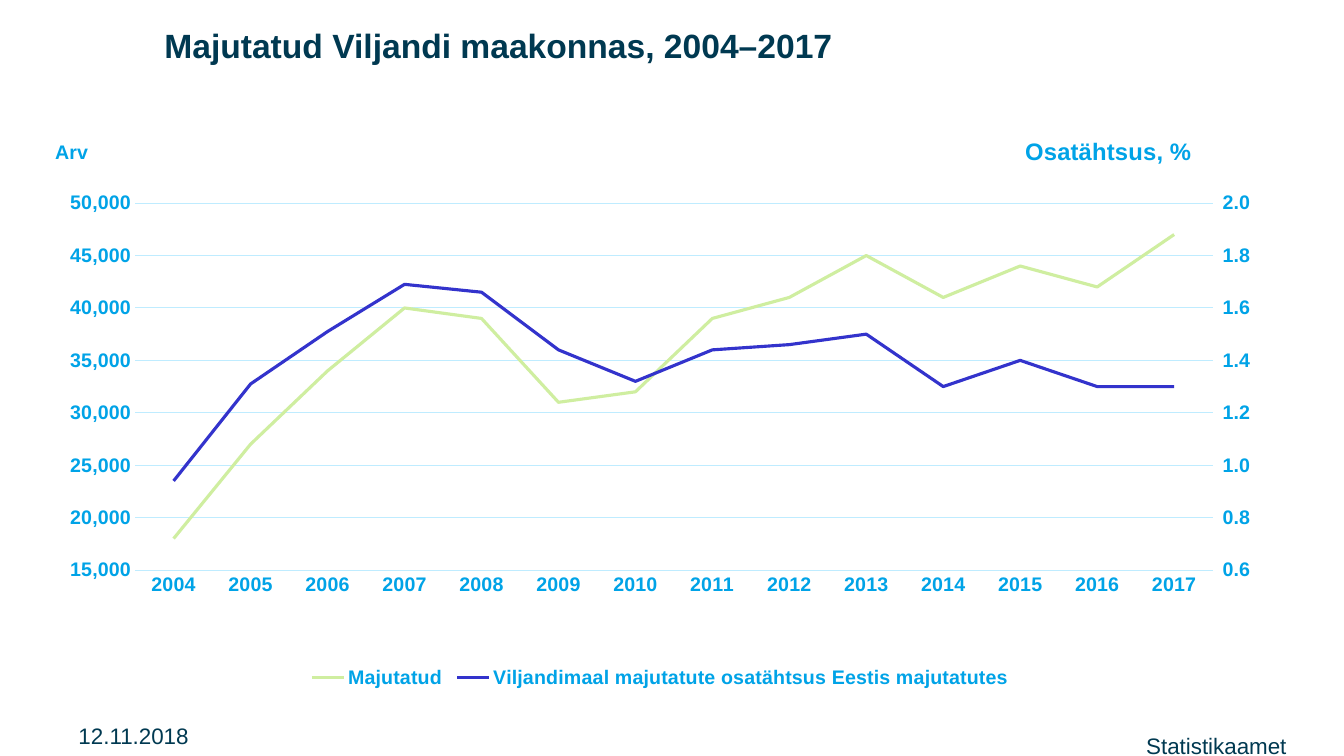
"""Build the slide on guests accommodated in Viljandi county, 2004–2017."""
from copy import deepcopy
from dataclasses import dataclass
from typing import Any

from lxml.etree import SubElement
from pptx import Presentation
from pptx.chart.axis import ValueAxis
from pptx.chart.data import CategoryChartData
from pptx.dml.color import RGBColor
from pptx.enum.chart import XL_CHART_TYPE as ChartType
from pptx.enum.chart import XL_LEGEND_POSITION as LegendPosition
from pptx.enum.chart import XL_TICK_LABEL_POSITION as LabelPosition
from pptx.enum.chart import XL_TICK_MARK as TickMark
from pptx.enum.text import MSO_ANCHOR as Anchor
from pptx.enum.text import PP_ALIGN as Align
from pptx.oxml.ns import qn
from pptx.util import Inches, Pt

NAVY = RGBColor(0x00, 0x39, 0x51)
SKY = RGBColor(0x00, 0xA3, 0xE7)
PALE_BLUE = RGBColor(0xBF, 0xEC, 0xFF)
LIME = RGBColor(0xCF, 0xEE, 0xA0)
INDIGO = RGBColor(0x33, 0x33, 0xCC)


@dataclass
class LineSeries:
    name: str
    values: list[float]
    color: RGBColor


@dataclass
class Label:
    text: str
    box: tuple[float, float, float, float]
    frame_format: dict[str, Any]
    paragraph_format: dict[str, Any]
    size: int = 16
    bold: bool = False


SERIES = [
    LineSeries("Majutatud", [18000, 27000, 34000, 40000, 39000, 31000, 32000,
                             39000, 41000, 45000, 41000, 44000, 42000, 47000], LIME),
    LineSeries("Viljandimaal majutatute osatähtsus Eestis majutatutes",
               [0.94, 1.31, 1.51, 1.69, 1.66, 1.44, 1.32,
                1.44, 1.46, 1.5, 1.3, 1.4, 1.3, 1.3], INDIGO),
]
NO_MARGINS = dict(margin_left=0, margin_top=0, margin_right=0, margin_bottom=0)
TITLE = Label("Majutatud Viljandi maakonnas, 2004–2017", (1.63, 0.12, 10.29, 0.66),
              NO_MARGINS | {"vertical_anchor": Anchor.MIDDLE},
              {"alignment": Align.LEFT}, 24, True)
FOOTERS = [
    Label("Statistikaamet", (8.54, 7.25, 4.22, 0.25),
          NO_MARGINS | {"margin_top": Inches(0.06)},
          {"alignment": Align.RIGHT, "line_spacing": 0.8}),
    Label("12.11.2018", (0.68, 7.1, 3.11, 0.4),
          {"vertical_anchor": Anchor.MIDDLE}, {"alignment": Align.LEFT}),
]


def set_all(target: Any, values: dict[str, Any]) -> None:
    for name, value in values.items():
        setattr(target, name, value)


def set_font(font: Any, size: int, color: RGBColor, bold: bool = True) -> None:
    set_all(font, {"name": "Arial", "size": Pt(size), "bold": bold})
    font.color.rgb = color


def set_line(line: Any, color: RGBColor, width: float) -> None:
    line.color.rgb = color
    line.width = Pt(width)


def fill_label(shape: Any, label: Label) -> None:
    places = map(Inches, label.box)
    set_all(shape, dict(zip(("left", "top", "width", "height"), places)))
    frame = shape.text_frame
    frame.text = label.text
    set_all(frame, {"word_wrap": True} | label.frame_format)
    paragraph = frame.paragraphs[0]
    set_all(paragraph, label.paragraph_format)
    set_font(paragraph.runs[0].font, label.size, NAVY, label.bold)


def set_layout(element: Any, index: int, inner: bool = False, **place: float) -> None:
    for old in element.findall(qn("c:layout")):
        element.remove(old)
    layout = element.makeelement(qn("c:layout"))
    element.insert(index, layout)
    manual = SubElement(layout, qn("c:manualLayout"))
    entries = {"layoutTarget": "inner"} if inner else {}
    entries |= {"xMode": "edge", "yMode": "edge"} | place
    for tag, value in entries.items():
        SubElement(manual, qn(f"c:{tag}")).set("val", str(value))


def set_title(title: Any, text: str, size: int, x: float, y: float) -> None:
    title.text_frame.text = text
    set_font(title.text_frame.paragraphs[0].runs[0].font, size, SKY)
    set_layout(title._element, 1, x=x, y=y)


def set_scale(axis: ValueAxis, low: float, high: float, step: float, pattern: str) -> None:
    set_all(axis, {"minimum_scale": low, "maximum_scale": high, "major_unit": step})
    set_all(axis.tick_labels, {"number_format": pattern, "number_format_is_linked": False})


def set_values(element: Any, values: dict[str, str]) -> None:
    for tag, value in values.items():
        element.find(qn(f"c:{tag}")).set("val", value)


def move_to_right_axis(chart: Any) -> None:
    plot_area = chart._chartSpace.chart.plotArea
    left_plot = plot_area.find(qn("c:lineChart"))
    left_axes = [plot_area.find(qn(tag)) for tag in ("c:catAx", "c:valAx")]
    right_plot = deepcopy(left_plot)
    hidden_years, right_values = [deepcopy(axis) for axis in left_axes]
    left_plot.remove(left_plot.findall(qn("c:ser"))[1])
    right_plot.remove(right_plot.findall(qn("c:ser"))[0])
    left_plot.addnext(right_plot)
    left_axes[1].addnext(right_values)
    right_values.addnext(hidden_years)

    year_id, value_id = "5001", "5002"
    for reference, number in zip(right_plot.findall(qn("c:axId")), (year_id, value_id)):
        reference.set("val", number)
    set_values(hidden_years, {"axId": year_id, "crossAx": value_id,
                              "delete": "1", "crosses": "autoZero"})
    set_values(right_values, {"axId": value_id, "crossAx": year_id,
                              "axPos": "r", "crosses": "max"})

    right_axis = ValueAxis(right_values)
    set_all(right_axis, {"has_major_gridlines": False, "major_tick_mark": TickMark.OUTSIDE,
                         "tick_label_position": LabelPosition.HIGH})
    set_scale(right_axis, 0.6, 2, 0.2, "0.0")


def add_guest_chart(slide: Any) -> None:
    data = CategoryChartData()
    data.categories = [str(year) for year in range(2004, 2018)]
    for series in SERIES:
        data.add_series(series.name, series.values)
    box = map(Inches, (0.45, 1.22, 12.2, 5.68))
    chart = slide.shapes.add_chart(ChartType.LINE, *box, data).chart
    set_font(chart.font, 14, NAVY)
    chart.plots[0].vary_by_categories = False
    for line, series in zip(chart.plots[0].series, SERIES):
        line.smooth = False
        set_line(line.format.line, series.color, 2.25)

    years, counts = chart.category_axis, chart.value_axis
    for axis in (years, counts):
        set_all(axis, {"major_tick_mark": TickMark.NONE, "minor_tick_mark": TickMark.NONE})
        set_font(axis.tick_labels.font, 14, SKY)
    set_line(years.format.line, PALE_BLUE, 0.75)
    counts.format.line.fill.background()
    counts.has_major_gridlines = True
    set_line(counts.major_gridlines.format.line, PALE_BLUE, 0.75)
    set_scale(counts, 15000, 50000, 5000, "#,##0")
    move_to_right_axis(chart)

    set_title(years.axis_title, "Arv", 14, 0.005, 0.022)
    set_title(chart.chart_title, "Osatähtsus, %", 17, 0.793, 0.015)
    chart.has_legend = True
    set_all(chart.legend, {"position": LegendPosition.BOTTOM, "include_in_layout": False})
    set_font(chart.legend.font, 14, SKY)
    set_layout(chart.legend._element, 1, x=0.21, y=0.953, w=0.58, h=0.047)
    set_layout(chart._chartSpace.chart.plotArea, 0, inner=True,
               x=0.073, y=0.14, w=0.876, h=0.641)


def main() -> None:
    presentation = Presentation()
    set_all(presentation, {"slide_width": Inches(13.33), "slide_height": Inches(7.5)})
    slide = presentation.slides.add_slide(presentation.slide_layouts[5])
    fill_label(slide.shapes.title, TITLE)
    for footer in FOOTERS:
        fill_label(slide.shapes.add_textbox(*map(Inches, footer.box)), footer)
    add_guest_chart(slide)
    presentation.save("out.pptx")


if __name__ == "__main__":
    main()
